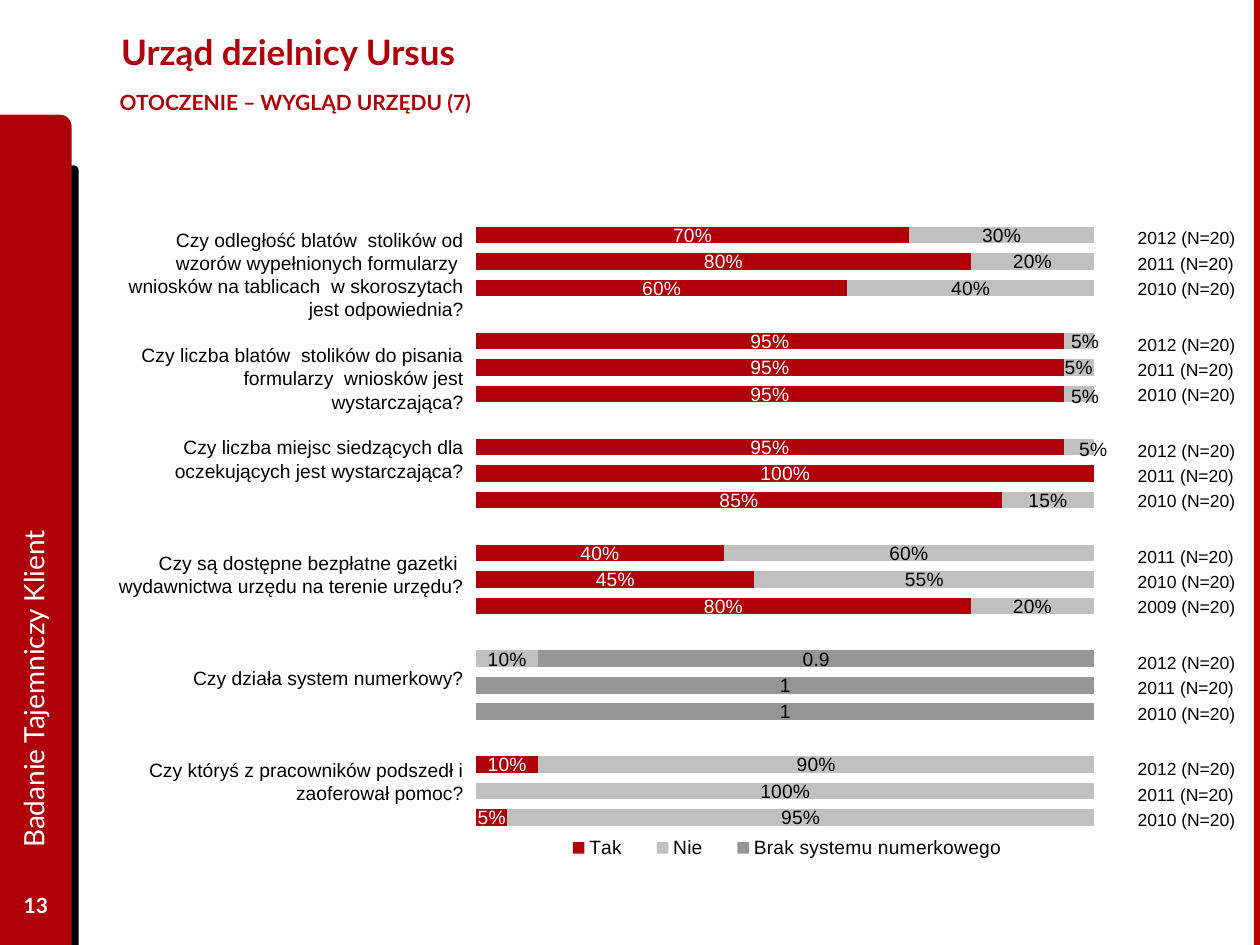
import pptx
import pptx.chart.data
import pptx.dml.color
import pptx.enum.chart
import pptx.enum.shapes
import pptx.enum.text
import pptx.oxml
import pptx.oxml.ns
import pptx.util

Pt = pptx.util.Pt
SHAPE = pptx.enum.shapes.MSO_SHAPE
ALIGN = pptx.enum.text.PP_ALIGN
ANCHOR = pptx.enum.text.MSO_ANCHOR
RED, BLACK, WHITE = "AF000A", "000000", "FFFFFF"

TITLE = "Urząd dzielnicy Ursus"
SUBTITLE = "OTOCZENIE – WYGLĄD URZĘDU (7)"
SIDE_TITLE = "Badanie Tajemniczy Klient"
PAGE = "13"
SERIES = [("Tak", RED, WHITE, "0%"), ("Nie", "C0C0C0", BLACK, "0%"),
          ("Brak systemu numerkowego", "969696", BLACK, "General")]
QUESTIONS = [
    ("Czy odległość blatów  stolików od wzorów wypełnionych formularzy  "
     "wniosków na tablicach  w skoroszytach jest odpowiednia?", 0, 2012,
     [(0.7, 0.3, None), (0.8, 0.2, None), (0.6, 0.4, None)]),
    ("Czy liczba blatów  stolików do pisania formularzy  wniosków jest wystarczająca?", 13, 2012,
     [(0.95, 0.05, None), (0.95, 0.05, None), (0.95, 0.05, None)]),
    ("Czy liczba miejsc siedzących dla oczekujących jest wystarczająca?", 13, 2012,
     [(0.95, 0.05, None), (1, None, None), (0.85, 0.15, None)]),
    ("Czy są dostępne bezpłatne gazetki  wydawnictwa urzędu na terenie urzędu?", 39.5, 2011,
     [(0.4, 0.6, None), (0.45, 0.55, None), (0.8, 0.2, None)]),
    ("Czy działa system numerkowy?", 39.5, 2012,
     [(None, 0.1, 0.9), (None, None, 1), (None, None, 1)]),
    ("Czy któryś z pracowników podszedł i zaoferował pomoc?", 39.5, 2012,
     [(0.1, 0.9, None), (None, 1, None), (0.05, 0.95, None)]),
]
LABEL_SHIFTS = {4: (0.01, 0), 6: (0.01, 0.004), 8: (0.023, 0.004)}


def rgb(color):
    return pptx.dml.color.RGBColor.from_string(color)


def style(tf, size, font, color, bold=False, align=ALIGN.LEFT):
    for p in tf.paragraphs:
        p.alignment = align
        for r in p.runs:
            r.font.size = Pt(size)
            r.font.name = font
            r.font.bold = bold
            r.font.color.rgb = rgb(color)


def add_block(shapes, kind, color, *box):
    sp = shapes.add_shape(kind, *map(Pt, box))
    sp.shadow.inherit = False
    sp.fill.solid()
    sp.fill.fore_color.rgb = rgb(color)
    sp.line.fill.background()
    return sp


def add_text(shapes, text, box, *look, anchor=ANCHOR.TOP, wrap=True, **options):
    sp = shapes.add_textbox(*map(Pt, box))
    tf = sp.text_frame
    tf.text = text
    tf.word_wrap = wrap
    tf.vertical_anchor = anchor
    style(tf, *look, **options)
    return sp


def chart_xml(tag, content="", attributes=""):
    ns = pptx.oxml.ns.nsdecls("c")
    return pptx.oxml.parse_xml(f"<c:{tag} {ns} {attributes}>{content}</c:{tag}>")


def layout(**values):
    parts = "".join(f'<c:{k} val="{v}"/>' for k, v in values.items())
    return chart_xml("layout", f"<c:manualLayout>{parts}</c:manualLayout>")


def add_chart(shapes):
    rows = []
    for *_, values in QUESTIONS:
        rows += values + [(None,) * len(SERIES)]
    rows.pop()
    data = pptx.chart.data.CategoryChartData()
    data.categories = [str(i + 1) for i in range(len(rows))]
    for (name, *_), values in zip(SERIES, zip(*rows)):
        data.add_series(name, values)
    chart = shapes.add_chart(pptx.enum.chart.XL_CHART_TYPE.BAR_STACKED,
                             Pt(271.5), Pt(113), Pt(361.5), Pt(383), data).chart
    chart.has_title = False
    chart.font.size = Pt(11)
    chart.font.name = "Arial"
    chart.font.color.rgb = rgb(BLACK)
    chart.category_axis.reverse_order = True
    chart.category_axis.visible = False
    axis = chart.value_axis
    axis.minimum_scale, axis.maximum_scale, axis.major_unit = 0, 1, 0.2
    axis.has_major_gridlines = False
    axis.visible = False

    plot = chart.plots[0]
    plot.gap_width, plot.overlap, plot.vary_by_categories = 60, 100, False
    for series, (_, fill, color, fmt) in zip(plot.series, SERIES):
        series.format.fill.solid()
        series.format.fill.fore_color.rgb = rgb(fill)
        labels = series.data_labels
        labels.show_value = True
        labels.number_format = fmt
        labels.number_format_is_linked = False
        labels.font.size = Pt(11)
        labels.font.color.rgb = rgb(color)

    points = plot.series[1].points
    for i, (x, y) in LABEL_SHIFTS.items():
        points[i].data_label.position = pptx.enum.chart.XL_LABEL_POSITION.CENTER
        label = chart.element.xpath(f".//c:dLbl[c:idx/@val='{i}']")[0]
        label.insert(1, layout(x=x, y=y))
        label.insert(2, chart_xml("numFmt", attributes='formatCode="0%" sourceLinked="0"'))

    chart.has_legend = True
    chart.legend.include_in_layout = False
    legend = chart.element.xpath(".//c:legend")[0]
    area = chart.element.xpath(".//c:plotArea")[0]
    for old in chart.element.xpath(".//c:legend/c:layout | .//c:plotArea/c:layout"):
        old.getparent().remove(old)
    legend.insert(1, layout(xMode="edge", yMode="edge", x=0.11, y=0.95, w=0.77, h=0.04))
    area.insert(0, layout(layoutTarget="inner", xMode="edge", yMode="edge",
                          x=0.002, y=0.036, w=0.98, h=0.909))


def main():
    prs = pptx.Presentation()
    prs.slide_width, prs.slide_height = Pt(720), Pt(540)
    s = prs.slides.add_slide(prs.slide_layouts[5])
    shapes = s.shapes

    add_block(shapes, SHAPE.ROUND_1_RECTANGLE, BLACK, 28, 94.5, 17, 445.5)
    add_block(shapes, SHAPE.ROUND_1_RECTANGLE, RED, 0, 65.5, 41, 474.5)
    add_block(shapes, SHAPE.RECTANGLE, "BD0000", 716.5, 0, 3.5, 540)

    title = shapes.title
    title.left, title.top, title.width, title.height = map(Pt, (62, 3.5, 559.5, 52))
    title.text_frame.text = TITLE
    title.text_frame.vertical_anchor = ANCHOR.MIDDLE
    style(title.text_frame, 20, "Lato", RED, bold=True)
    sp = add_text(shapes, SUBTITLE, (54, 47.5, 277, 24), 12, "Lato", RED, bold=True, wrap=False)
    sp.text_frame.margin_left = sp.text_frame.margin_right = Pt(14.4)

    sp = add_block(shapes, SHAPE.RECTANGLE, WHITE, 54, 127, 218, 360)
    tf = sp.text_frame
    tf.word_wrap = True
    tf.vertical_anchor = ANCHOR.TOP
    tf.text = "\n".join(question for question, *_ in QUESTIONS)
    style(tf, 11, "Arial", BLACK, align=ALIGN.RIGHT)
    for p, (_, gap, *_) in zip(tf.paragraphs, QUESTIONS):
        p.space_before = Pt(gap)

    add_chart(shapes)

    for i, (_, _, year, values) in enumerate(QUESTIONS):
        text = "\n".join(f"{year - k} (N=20)" for k in range(len(values)))
        sp = add_text(shapes, text, (643, 124 + 60.7 * i, 76, 50), 10, "Arial", BLACK)
        for p in sp.text_frame.paragraphs:
            p.line_spacing = 1.2

    add_text(shapes, PAGE, (0, 502.5, 41, 29), 12, "Lato", WHITE, bold=True,
             align=ALIGN.CENTER, anchor=ANCHOR.MIDDLE)
    sp = add_text(shapes, SIDE_TITLE, (-188.5, 265.5, 415, 37), 16, "Lato", WHITE,
                  anchor=ANCHOR.MIDDLE)
    sp.rotation = 270
    prs.save("out.pptx")


if __name__ == "__main__":
    main()
